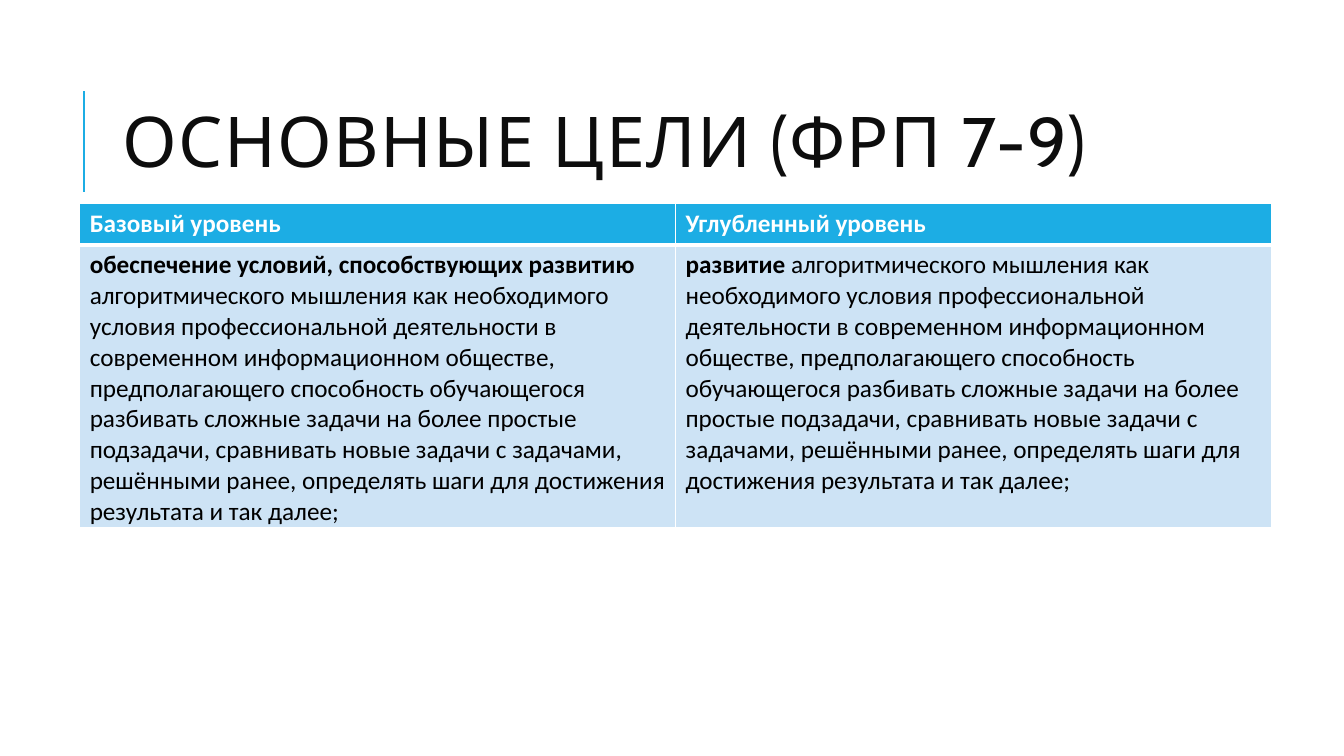
from lxml import etree
from pptx import Presentation
from pptx.dml.color import RGBColor
from pptx.enum.shapes import MSO_CONNECTOR
from pptx.enum.text import MSO_ANCHOR
from pptx.oxml.ns import qn
from pptx.util import Inches, Pt

ACCENT = RGBColor(0x1C, 0xAD, 0xE4)
PALE = RGBColor(0xCD, 0xE3, 0xF5)
WHITE = RGBColor(0xFF, 0xFF, 0xFF)
BLACK = RGBColor(0x00, 0x00, 0x00)
TITLE_INK = RGBColor(0x0D, 0x0D, 0x0D)

TITLE = "ОСНОВНЫЕ ЦЕЛИ (ФРП 7-9)"
GOAL = (
    " алгоритмического мышления как необходимого условия профессиональной "
    "деятельности в современном информационном обществе, предполагающего "
    "способность обучающегося разбивать сложные задачи на более простые "
    "подзадачи, сравнивать новые задачи с задачами, решёнными ранее, "
    "определять шаги для достижения результата и так далее;"
)
LEVELS = [
    ("Базовый уровень", "обеспечение условий, способствующих развитию"),
    ("Углубленный уровень", "развитие"),
]


def add_title(slide, left, top, width, height):
    # Accent rule left of the heading
    x = Inches(left - 0.29)
    rule = slide.shapes.add_connector(
        MSO_CONNECTOR.STRAIGHT, x, Inches(top + 1.26), x, Inches(top + 0.26))
    rule.line.color.rgb = ACCENT
    rule.line.width = Pt(1.5)
    etree.SubElement(rule._element.spPr, qn("a:effectLst"))

    # Heading
    box = slide.shapes.add_textbox(
        Inches(left), Inches(top), Inches(width), Inches(height))
    tf = box.text_frame
    tf.word_wrap = True
    tf.vertical_anchor = MSO_ANCHOR.MIDDLE
    p = tf.paragraphs[0]
    p.line_spacing = 0.8
    p.font.name = "Cabin"
    p.font.size = Pt(50)
    p.font.color.rgb = TITLE_INK
    r = p.add_run()
    r.text = TITLE
    r.font._element.set("spc", "100")


def set_borders(cell, **widths):
    tcPr = cell._tc.get_or_add_tcPr()
    for side in "LRTB":
        ln = etree.SubElement(tcPr, qn(f"a:ln{side}"), w=str(Pt(widths.get(side, 1))))
        fill = etree.SubElement(ln, qn("a:solidFill"))
        etree.SubElement(fill, qn("a:srgbClr"), val=str(WHITE))


def fill_cell(cell, parts, fill, color, **borders):
    set_borders(cell, **borders)
    cell.fill.solid()
    cell.fill.fore_color.rgb = fill
    p = cell.text_frame.paragraphs[0]
    p.font.name = "Calibri"
    p.font.size = Pt(18)
    p.font.color.rgb = color
    for text, bold in parts:
        r = p.add_run()
        r.text = text
        r.font.bold = bold


def add_levels_table(slide, left, top, width, height):
    header_height = 0.41
    table = slide.shapes.add_table(
        2, len(LEVELS), Inches(left), Inches(top), Inches(width), Inches(height)).table
    table.rows[0].height = Inches(header_height)
    table.rows[1].height = Inches(height - header_height)
    for col, (level, lead) in enumerate(LEVELS):
        fill_cell(table.cell(0, col), [(level, True)], ACCENT, WHITE, B=3)
        fill_cell(table.cell(1, col), [(lead, True), (GOAL, False)], PALE, BLACK, T=3)


def main():
    prs = Presentation()
    prs.slide_width = Inches(13.33)
    prs.slide_height = Inches(7.5)
    slide = prs.slides.add_slide(prs.slide_layouts[6])
    add_title(slide, 1.12, 0.64, 10.63, 1.64)
    add_levels_table(slide, 0.79, 2.02, 11.82, 3.21)
    prs.save("out.pptx")


if __name__ == "__main__":
    main()
